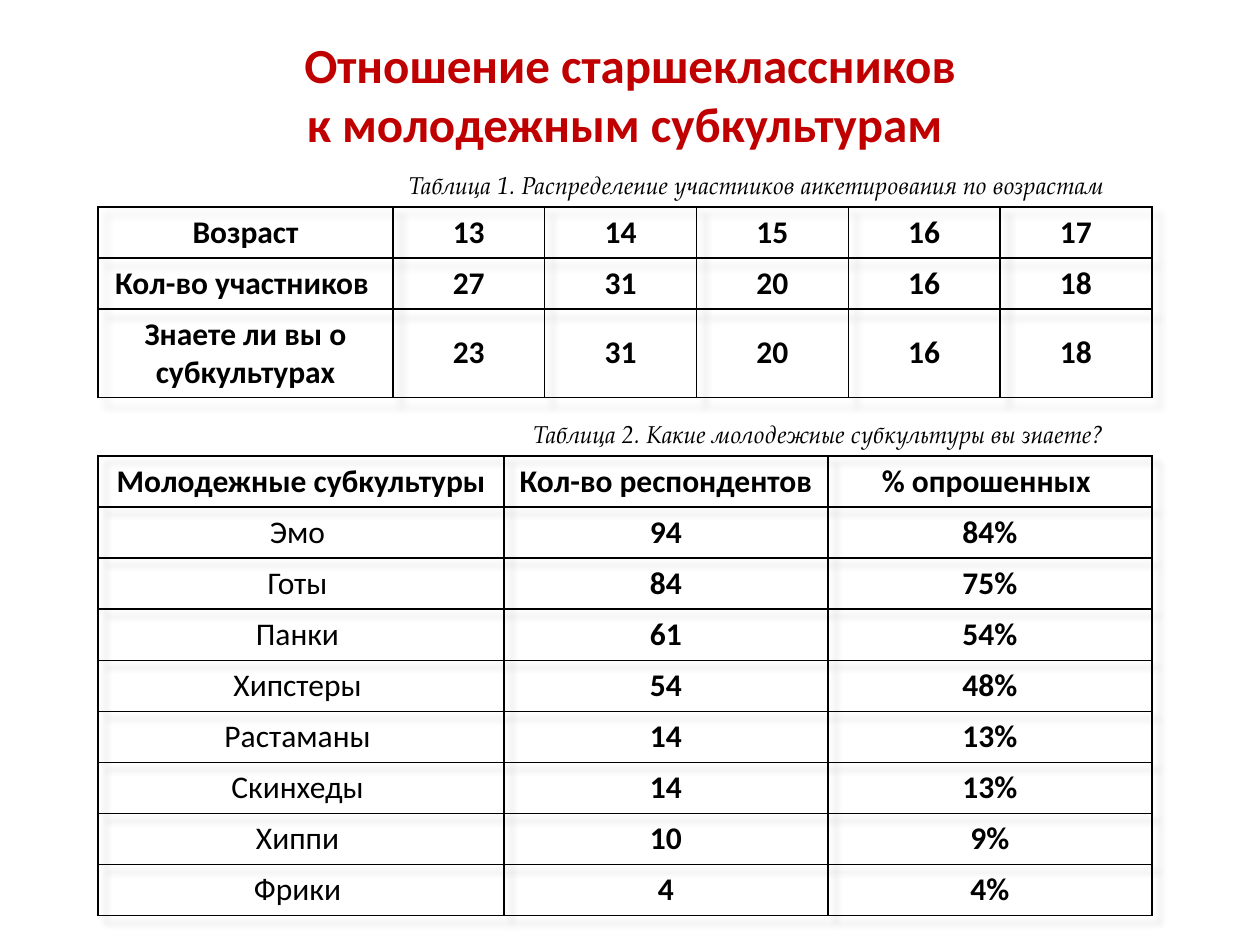
from lxml.etree import SubElement
from pptx import Presentation
from pptx.dml.color import RGBColor
from pptx.enum.text import MSO_ANCHOR as Anchor, MSO_AUTO_SIZE as AutoSize, PP_ALIGN as Align
from pptx.oxml import parse_xml
from pptx.oxml.ns import nsdecls, qn
from pptx.util import Cm, Pt

RED = RGBColor(0xC0, 0x00, 0x00)
BLACK = RGBColor(0x00, 0x00, 0x00)
BODY_FONT = "Calibri"
CAPTION_FONT = "TeX Gyre Pagella"

TABLE_LEFT = 1.98
ROW_HEIGHT = 1.03
CAPTION_OFFSET = 5.56
CAPTION_WIDTH = 15.09
CAPTION_HEIGHT = 0.86

AGE_ROWS = [
    ["Возраст", "13", "14", "15", "16", "17"],
    ["Кол-во участников ", "27", "31", "20", "16", "18"],
    ["Знаете ли вы о субкультурах", "23", "31", "20", "16", "18"],
]
SUBCULTURE_ROWS = [
    ["Молодежные субкультуры", "Кол-во респондентов ", "% опрошенных "],
    ["Эмо ", "94", "84%"],
    ["Готы ", "84", "75%"],
    ["Панки ", "61", "54%"],
    ["Хипстеры ", "54", "48%"],
    ["Растаманы ", "14", "13%"],
    ["Скинхеды ", "14", "13%"],
    ["Хиппи ", "10", "9%"],
    ["Фрики ", "4", "4%"],
]


def style_paragraph(paragraph, align, font_name, size, color, bold=False, italic=False):
    """Align a paragraph and format its runs."""
    paragraph.alignment = align
    for run in paragraph.runs:
        font = run.font
        font.name, font.size = font_name, Pt(size)
        font.bold, font.italic = bold, italic
        font.color.rgb = color


def add_text(slide, box, text, *style, **emphasis):
    """Add a wrapping text box with one style for all its lines."""
    text_frame = slide.shapes.add_textbox(*map(Cm, box)).text_frame
    text_frame.word_wrap = True
    text_frame.auto_size = AutoSize.SHAPE_TO_FIT_TEXT
    text_frame.text = text
    for paragraph in text_frame.paragraphs:
        style_paragraph(paragraph, *style, **emphasis)


def add_borders(cell):
    """Draw a thin black line on each side of a cell."""
    properties = cell._tc.get_or_add_tcPr()
    for side in ("a:lnL", "a:lnR", "a:lnT", "a:lnB"):
        line = SubElement(properties, qn(side), w=str(Pt(1)))
        fill = SubElement(line, qn("a:solidFill"))
        SubElement(fill, qn("a:srgbClr"), val=str(BLACK))


def add_table_shadow(table):
    """Give a table a soft grey shadow to the lower right."""
    table._tbl.tblPr.insert(0, parse_xml(
        f'<a:effectLst {nsdecls("a")}>'
        '<a:outerShdw blurRad="50800" dist="76200" dir="2700000" algn="tl" rotWithShape="0">'
        '<a:srgbClr val="000000"><a:alpha val="20000"/></a:srgbClr>'
        '</a:outerShdw></a:effectLst>'))


def add_captioned_table(slide, left, top, caption, rows, widths, plain_labels=False):
    """Place a bordered table with its caption resting on the top edge."""
    caption_box = (left + CAPTION_OFFSET, top - CAPTION_HEIGHT, CAPTION_WIDTH, CAPTION_HEIGHT)
    box = (left, top, sum(widths), ROW_HEIGHT * len(rows))
    table = slide.shapes.add_table(len(rows), len(widths), *map(Cm, box)).table
    table.first_row = table.horz_banding = False
    add_table_shadow(table)
    for column, width in zip(table.columns, widths):
        column.width = Cm(width)
    for row_index, values in enumerate(rows):
        table.rows[row_index].height = Cm(ROW_HEIGHT)
        for column_index, value in enumerate(values):
            cell = table.cell(row_index, column_index)
            add_borders(cell)
            cell.fill.background()
            cell.vertical_anchor = Anchor.MIDDLE
            cell.text_frame.text = value
            is_plain = plain_labels and row_index > 0 and column_index == 0
            style_paragraph(cell.text_frame.paragraphs[0], Align.CENTER,
                            BODY_FONT, 18, BLACK, bold=not is_plain)
    add_text(slide, caption_box, caption, Align.RIGHT, CAPTION_FONT, 14, BLACK, italic=True)


def main():
    """Build and save the survey slide."""
    presentation = Presentation()
    presentation.slide_width, presentation.slide_height = Cm(25.4), Cm(19.05)
    slide = presentation.slides.add_slide(presentation.slide_layouts[6])
    add_text(slide, (0, 0.58, 25.4, 2.64),
             "Отношение старшеклассников\nк молодежным субкультурам ",
             Align.CENTER, BODY_FONT, 28, RED, bold=True)
    add_captioned_table(slide, TABLE_LEFT, 4.17,
                        "Таблица 1. Распределение участников анкетирования по возрастам ",
                        AGE_ROWS, [5.94] + [3.06] * 5)
    add_captioned_table(slide, TABLE_LEFT, 9.19,
                        "Таблица 2. Какие молодежные субкультуры вы знаете? ",
                        SUBCULTURE_ROWS, [8.18] + [6.53] * 2, plain_labels=True)
    presentation.save("out.pptx")


if __name__ == "__main__":
    main()
